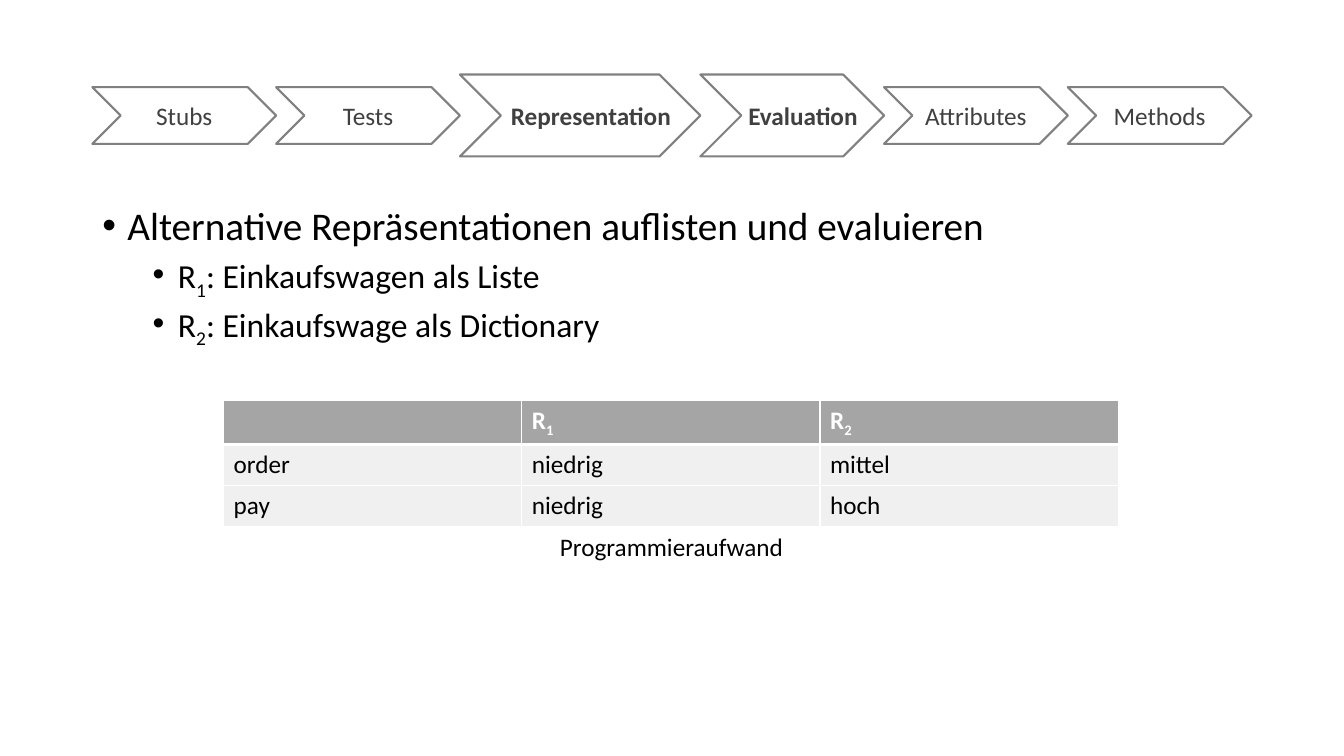
"""Builds the slide on comparing data representations of a shopping cart."""
from dataclasses import dataclass

from lxml import etree
from pptx import Presentation
from pptx.dml.color import RGBColor
from pptx.enum.shapes import MSO_SHAPE
from pptx.enum.text import MSO_ANCHOR, PP_ALIGN
from pptx.oxml.ns import qn
from pptx.slide import Slide
from pptx.table import _Cell
from pptx.text.text import TextFrame, _Paragraph
from pptx.util import Pt

CHEVRON = MSO_SHAPE.CHEVRON
MIDDLE = MSO_ANCHOR.MIDDLE
CENTER = PP_ALIGN.CENTER
EMU_PER_PX = 9525
FONT = "Calibri"
BLACK, WHITE = "000000", "FFFFFF"
STEP_LINE, STEP_TEXT = "808080", "404040"
HEADER_FILL, BODY_FILL = "A5A5A5", "F0F0F0"


@dataclass(frozen=True)
class Span:
    text: str
    subscript: bool = False


@dataclass(frozen=True)
class Step:
    label: str
    width: int = 175
    active: bool = False


@dataclass(frozen=True)
class Bullet:
    spans: list[Span]
    level: int
    size: int
    indent: int
    space_before: int


R1 = [Span("R"), Span("1", True)]
R2 = [Span("R"), Span("2", True)]
STEPS = [
    Step("Stubs"),
    Step("Tests"),
    Step("Representation", 229, True),
    Step("Evaluation", active=True),
    Step("Attributes"),
    Step("Methods"),
]
BULLETS = [
    Bullet([Span("Alternative Repräsentationen auflisten und evaluieren")], 0, 28, 24, 0),
    Bullet([*R1, Span(": Einkaufswagen als Liste")], 1, 24, 72, 5),
    Bullet([*R2, Span(": Einkaufswage als Dictionary")], 1, 24, 72, 5),
]
EFFORT_ROWS = [
    [[], R1, R2],
    [[Span("order")], [Span("niedrig")], [Span("mittel")]],
    [[Span("pay")], [Span("niedrig")], [Span("hoch")]],
]


def px(value: int) -> int:
    """Turn pixels into EMU."""
    return value * EMU_PER_PX


def color(value: str) -> RGBColor:
    """Turn a hex string into a colour."""
    return RGBColor.from_string(value)


def add_spans(para: _Paragraph, spans: list[Span], size: int, ink: str, bold: bool = False) -> None:
    """Append formatted runs to a paragraph."""
    for span in spans:
        run = para.add_run()
        run.text = span.text
        run.font.name = FONT
        run.font.size = Pt(size)
        run.font.bold = bold
        run.font.color.rgb = color(ink)
        if span.subscript:
            run.font._element.set("baseline", "-25000")


def add_text_box(slide: Slide, left: int, top: int, width: int, height: int) -> TextFrame:
    """Add a wrapping text box and return its frame."""
    box = slide.shapes.add_textbox(px(left), px(top), px(width), px(height))
    box.text_frame.word_wrap = True
    return box.text_frame


def add_steps(slide: Slide, left: int, middle: int) -> None:
    """Draw the process steps side by side around one middle line."""
    for step in STEPS:
        height = 78 if step.active else 54
        shape = slide.shapes.add_shape(
            CHEVRON, px(left), px(middle - height // 2), px(step.width), px(height)
        )
        shape.shadow.inherit = False
        shape.fill.background()
        shape.line.color.rgb = color(STEP_LINE)
        shape.line.width = Pt(1.5)
        frame = shape.text_frame
        frame.vertical_anchor = MIDDLE
        frame.word_wrap = not step.active
        if step.active:
            frame.margin_left = px(30)
        para = frame.paragraphs[0]
        para.alignment = CENTER
        add_spans(para, [Span(step.label)], 18, STEP_TEXT, step.active)
        left += step.width


def add_bullets(slide: Slide) -> None:
    """Write the bulleted list."""
    frame = add_text_box(slide, 88, 192, 1104, 457)
    for index, bullet in enumerate(BULLETS):
        para = frame.add_paragraph() if index else frame.paragraphs[0]
        properties = para._p.get_or_add_pPr()
        properties.set("marL", str(px(bullet.indent)))
        properties.set("indent", str(px(-24)))
        etree.SubElement(properties, qn("a:buFont"), typeface="Arial")
        etree.SubElement(properties, qn("a:buChar"), char="•")
        para.level = bullet.level
        para.line_spacing = 0.9
        para.space_before = Pt(bullet.space_before)
        add_spans(para, bullet.spans, bullet.size, BLACK)


def add_borders(cell: _Cell, top: int, bottom: int) -> None:
    """Draw white cell borders with the given top and bottom widths in points."""
    properties = cell._tc.get_or_add_tcPr()
    for side, width in (("L", 1), ("R", 1), ("T", top), ("B", bottom)):
        line = etree.SubElement(properties, qn(f"a:ln{side}"), w=str(Pt(width)))
        fill = etree.SubElement(line, qn("a:solidFill"))
        etree.SubElement(fill, qn("a:srgbClr"), val=WHITE)


def add_effort_table(slide: Slide) -> None:
    """Build the table of programming effort per representation."""
    row_count, column_count = len(EFFORT_ROWS), len(EFFORT_ROWS[0])
    table = slide.shapes.add_table(
        row_count, column_count, px(213), px(381), px(284 * column_count), px(39 * row_count)
    ).table
    table.horz_banding = False
    for row_index, row in enumerate(EFFORT_ROWS):
        header = row_index == 0
        for column_index, spans in enumerate(row):
            cell = table.cell(row_index, column_index)
            add_borders(cell, 3 if row_index == 1 else 1, 3 if header else 1)
            cell.fill.solid()
            cell.fill.fore_color.rgb = color(HEADER_FILL if header else BODY_FILL)
            para = cell.text_frame.paragraphs[0]
            add_spans(para, spans, 18, WHITE if header else BLACK, header)


def add_caption(slide: Slide) -> None:
    """Write the caption below the table."""
    para = add_text_box(slide, 213, 501, 853, 38).paragraphs[0]
    para.alignment = CENTER
    add_spans(para, [Span("Programmieraufwand")], 18, BLACK)


def main() -> None:
    """Build and save the deck."""
    deck = Presentation()
    deck.slide_width, deck.slide_height = px(1280), px(720)
    page = deck.slides.add_slide(deck.slide_layouts[6])
    add_bullets(page)
    add_steps(page, 88, 110)
    add_effort_table(page)
    add_caption(page)
    deck.save("out.pptx")


if __name__ == "__main__":
    main()
